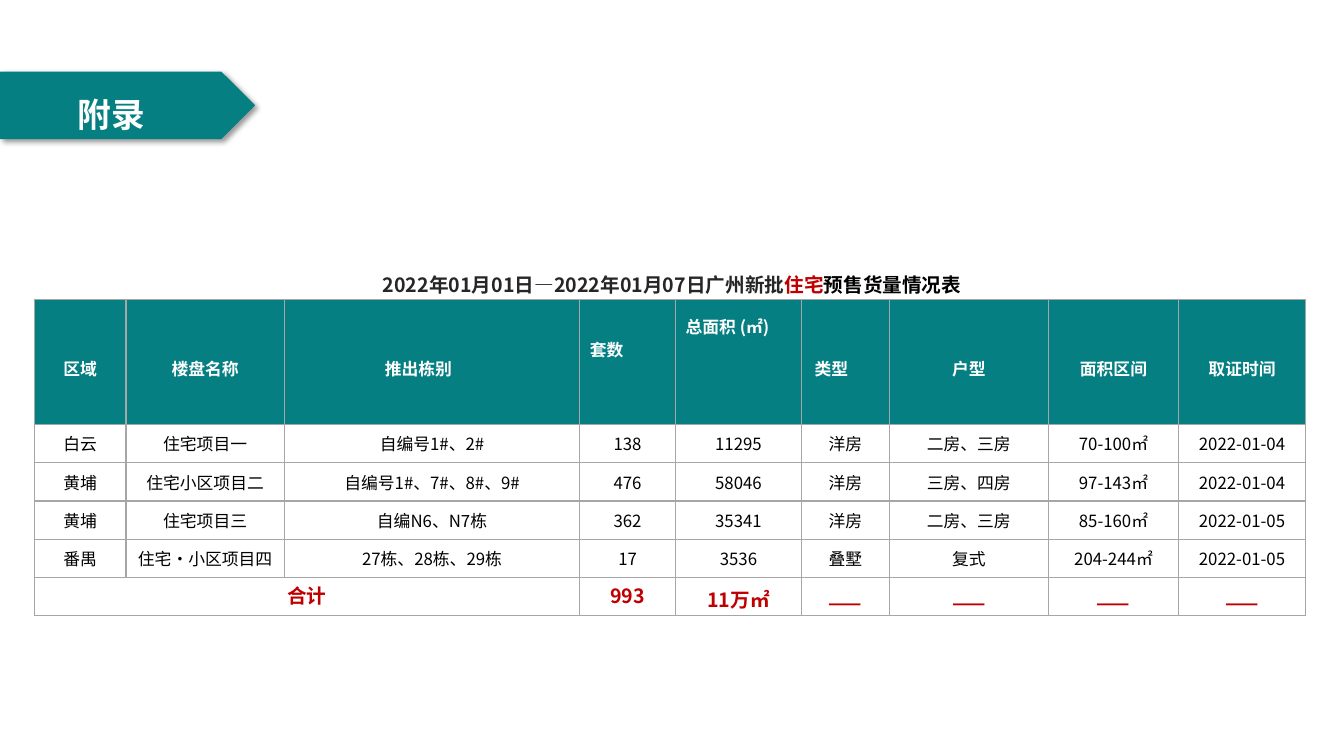
from lxml import etree
from pptx import Presentation
from pptx import util as u
from pptx.dml.color import RGBColor
from pptx.enum import shapes, text
from pptx.oxml import parse_xml
from pptx.oxml.ns import nsdecls, qn

COLORS = {"teal": "057F82", "white": "FFFFFF", "black": "000000",
          "dark": "262626", "red": "C00000", "grid": "A6A6A6"}
FONT = "Noto Sans CJK SC"
ALIGN = text.PP_ALIGN

COLUMN_WIDTHS = [0.91, 1.57, 2.93, 0.95, 1.25, 0.87, 1.58, 1.29, 1.26]
HEADER_HEIGHT, ROW_HEIGHT = 1.24, 0.38
HEADINGS = ["区域", "楼盘名称", "推出栋别", "套数", "总面积 (㎡)", "类型",
            "户型", "面积区间", "取证时间"]
# Alignment and margins (left, top, right, bottom) of headings off the centre
HEADING_PLACES = {
    "推出栋别": (ALIGN.CENTER, (0.1, 0.02, 0.37, 0.02)),
    "套数": (ALIGN.LEFT, (0.1, 0.02, 0.1, 0.4)),
    "总面积 (㎡)": (ALIGN.LEFT, (0.1, 0.02, 0.1, 0.85)),
    "类型": (ALIGN.LEFT, (0.13, 0.02, 0.1, 0.02)),
}
HEADING_DEFAULT = (ALIGN.CENTER, (0.1, 0.02, 0.1, 0.02))
PROJECTS = [
    ["白云", "住宅项目一", "自编号1#、2#", "138", "11295", "洋房",
     "二房、三房", "70-100㎡", "2022-01-04"],
    ["黄埔", "住宅小区项目二", "自编号1#、7#、8#、9#", "476", "58046", "洋房",
     "三房、四房", "97-143㎡", "2022-01-04"],
    ["黄埔", "住宅项目三", "自编N6、N7栋", "362", "35341", "洋房",
     "二房、三房", "85-160㎡", "2022-01-05"],
    ["番禺", "住宅·小区项目四", "27栋、28栋、29栋", "17", "3536", "叠墅",
     "复式", "204-244㎡", "2022-01-05"],
]
TOTALS = ["合计", "", "", "993", "11万㎡"] + ["——"] * 4


def rgb(name):
    return RGBColor.from_string(COLORS[name])


def write(frame, *runs, size=12, color="black", bold=False,
          align=ALIGN.CENTER, spacing=1.0):
    """Fill the first paragraph; a run is a string or a (string, colour) pair."""
    paragraph = frame.paragraphs[0]
    paragraph.alignment = align
    paragraph.line_spacing = spacing
    for part in runs:
        words, shade = part if isinstance(part, tuple) else (part, color)
        run = paragraph.add_run()
        run.text = words
        run.font.size, run.font.bold, run.font.name = u.Pt(size), bold, FONT
        run.font.color.rgb = rgb(shade)
        east_asian = etree.SubElement(run.font._element, qn("a:ea"))
        east_asian.set("typeface", FONT)


class AppendixSlide:
    def __init__(self, deck):
        self.slide = deck.slides.add_slide(deck.slide_layouts[5])

    def banner(self, left, top, width, height):
        ribbon = self.slide.shapes.add_shape(
            shapes.MSO_SHAPE.PENTAGON, u.Inches(left), u.Inches(top),
            u.Inches(width), u.Inches(height))
        ribbon.fill.solid()
        ribbon.fill.fore_color.rgb = rgb("teal")
        ribbon.line.fill.background()
        ribbon._element.spPr.append(parse_xml(
            f'<a:effectLst {nsdecls("a")}><a:outerShdw blurRad="50800" '
            f'dist="38100" dir="2700000" algn="tl" rotWithShape="0">'
            f'<a:srgbClr val="{COLORS["black"]}"><a:alpha val="40000"/>'
            f'</a:srgbClr></a:outerShdw></a:effectLst>'))

    def title(self, words, left, top, width, height):
        heading = self.slide.shapes.title
        heading.left, heading.top = u.Inches(left), u.Inches(top)
        heading.width, heading.height = u.Inches(width), u.Inches(height)
        frame = heading.text_frame
        frame.word_wrap = False
        frame.auto_size = text.MSO_AUTO_SIZE.NONE
        frame.vertical_anchor = text.MSO_ANCHOR.TOP
        write(frame, words, size=24, color="white", bold=True, spacing=1.2)
        # Bring the title in front of the banner
        self.slide.shapes._spTree.append(heading._element)

    def caption(self, runs, left, top, width, height):
        box = self.slide.shapes.add_textbox(
            u.Inches(left), u.Inches(top), u.Inches(width), u.Inches(height))
        box.text_frame.word_wrap = True
        write(box.text_frame, *runs, size=14, color="dark", bold=True, spacing=1.2)

    def table(self, left, top, row_count):
        heights = [HEADER_HEIGHT] + [ROW_HEIGHT] * (row_count - 1)
        grid = self.slide.shapes.add_table(
            row_count, len(COLUMN_WIDTHS), u.Inches(left), u.Inches(top),
            u.Inches(sum(COLUMN_WIDTHS)), u.Inches(sum(heights))).table
        grid.first_row = grid.horz_banding = False
        for column, width in zip(grid.columns, COLUMN_WIDTHS):
            column.width = u.Inches(width)
        for row, height in zip(grid.rows, heights):
            row.height = u.Inches(height)
        return grid

    def cell(self, cell, words, margins=(0, 0, 0, 0), fill="white", **style):
        cell.vertical_anchor = text.MSO_ANCHOR.MIDDLE
        (cell.margin_left, cell.margin_top, cell.margin_right,
         cell.margin_bottom) = map(u.Inches, margins)
        for side in ("lnL", "lnR", "lnT", "lnB"):
            cell._tc.tcPr.append(parse_xml(
                f'<a:{side} {nsdecls("a")} w="12700"><a:solidFill>'
                f'<a:srgbClr val="{COLORS["grid"]}"/></a:solidFill></a:{side}>'))
        cell.fill.solid()
        cell.fill.fore_color.rgb = rgb(fill)
        if words:
            write(cell.text_frame, words, **style)


def main():
    deck = Presentation()
    deck.slide_width, deck.slide_height = u.Inches(13.33), u.Inches(7.5)
    page = AppendixSlide(deck)
    page.banner(0, 0.71, 2.53, 0.67)
    page.title("附录", 0.56, 0.8, 1.09, 0.55)
    page.caption(["2022年01月01日—2022年01月07日广州新批", ("住宅", "red"),
                  ("预售货量情况表", "black")], 0.52, 2.61, 12.29, 0.38)

    presales = page.table(0.34, 2.97, len(PROJECTS) + 2)
    for column, heading in enumerate(HEADINGS):
        align, margins = HEADING_PLACES.get(heading, HEADING_DEFAULT)
        page.cell(presales.cell(0, column), heading, margins, "teal",
                  color="white", bold=True, align=align, spacing=1.5)
    for row, project in enumerate(PROJECTS, 1):
        for column, value in enumerate(project):
            page.cell(presales.cell(row, column), value)

    last = len(PROJECTS) + 1
    presales.cell(last, 0).merge(presales.cell(last, 2))
    for column, total in enumerate(TOTALS):
        margins = (0.1, 0.04, 0.1, 0.04) if column > 4 else (0.01, 0.01, 0.01, 0.05)
        page.cell(presales.cell(last, column), total, margins, size=14,
                  color="red", bold=True, spacing=1.2 if column > 3 else 1.0)
    deck.save("out.pptx")


if __name__ == "__main__":
    main()
